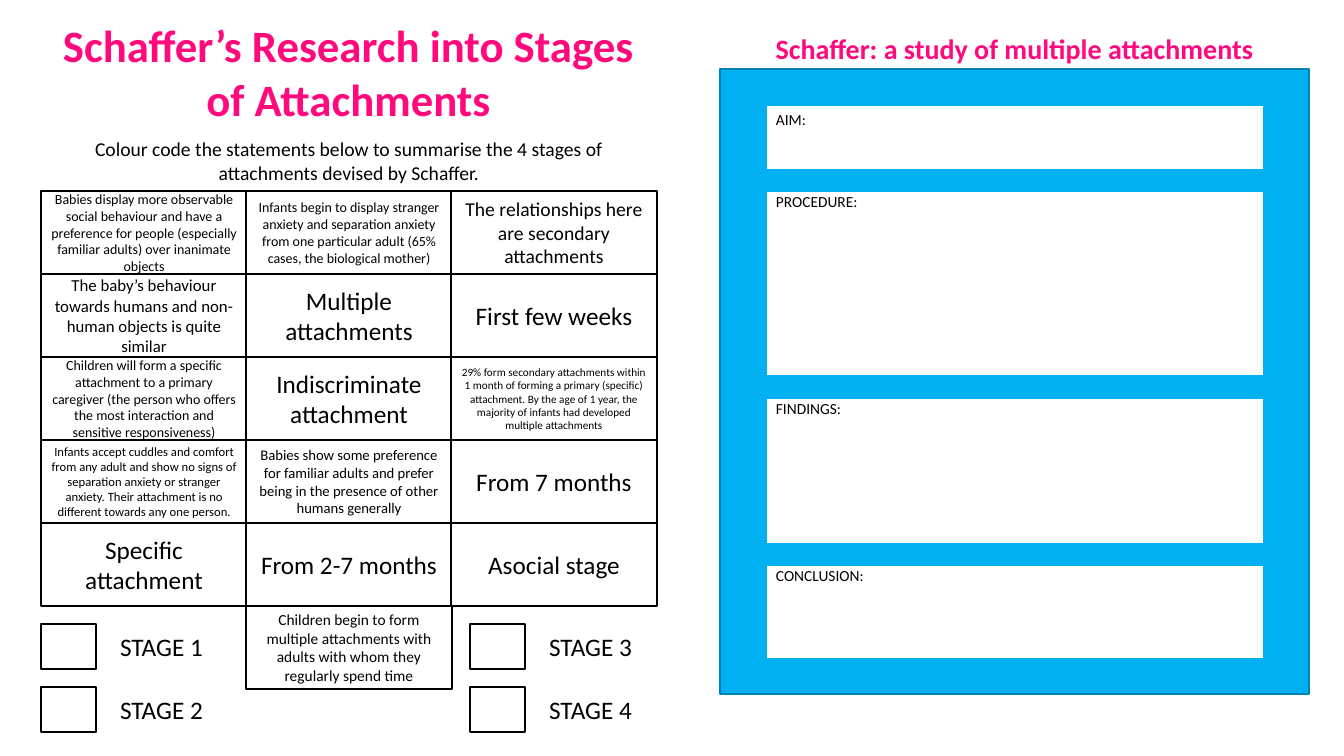
from pptx import Presentation
from pptx import util as u
from pptx.dml.color import RGBColor
from pptx.enum import shapes, text

PX = 914400 / 100.8
COLORS = {"pink": "FF097C", "blue": "00B0F0", "edge": "0082B2", "white": "FFFFFF", "black": "000000"}
STATEMENTS = [
    [("Babies display more observable social behaviour and have a preference for people (especially familiar adults) over inanimate objects", 10),
     ("Infants begin to display stranger anxiety and separation anxiety from one particular adult (65% cases, the biological mother)", 10),
     ("The relationships here are secondary attachments", 14)],
    [("The baby’s behaviour towards humans and non-human objects is quite similar", 12),
     ("Multiple attachments", 18),
     ("First few weeks", 18)],
    [("Children will form a specific attachment to a primary caregiver (the person who offers the most interaction and sensitive responsiveness)", 10),
     ("Indiscriminate attachment", 18),
     ("29% form secondary attachments within 1 month of forming a primary (specific) attachment. By the age of 1 year, the majority of infants had developed multiple attachments", 8)],
    [("Infants accept cuddles and comfort from any adult and show no signs of separation anxiety or stranger anxiety. Their attachment is no different towards any one person.", 9),
     ("Babies show some preference for familiar adults and prefer being in the presence of other humans generally", 10.5),
     ("From 7 months", 18)],
    [("Specific attachment", 18),
     ("From 2-7 months", 18),
     ("Asocial stage", 18)],
    [None,
     ("Children begin to form multiple attachments with adults with whom they regularly spend time", 11),
     None],
]
STUDY_PARTS = [("AIM:", 105, 65, 5), ("PROCEDURE:", 191, 185, 1),
               ("FINDINGS:", 398, 146, 1), ("CONCLUSION:", 565, 94, 1)]

prs = Presentation()
prs.slide_width, prs.slide_height = round(1344 * PX), round(756 * PX)
slide = prs.slides.add_slide(prs.slide_layouts[5])


def add_box(x, y, w, h, fill="white", line=None):
    sp = slide.shapes.add_shape(shapes.MSO_SHAPE.RECTANGLE, *(round(v * PX) for v in (x, y, w, h)))
    sp.shadow.inherit = False
    sp.fill.solid()
    sp.fill.fore_color.rgb = RGBColor.from_string(COLORS[fill])
    if line:
        sp.line.color.rgb = RGBColor.from_string(COLORS[line])
        sp.line.width = u.Pt(1)
    else:
        sp.line.fill.background()
    return sp


def write(sp, words, size, color="black", bold=False, align=text.PP_ALIGN.CENTER, anchor=text.MSO_ANCHOR.MIDDLE):
    tf = sp.text_frame
    tf.word_wrap = True
    tf.auto_size = text.MSO_AUTO_SIZE.NONE
    tf.vertical_anchor = anchor
    p = tf.paragraphs[0]
    p.text = words
    p.alignment = align
    p.font.name = "Calibri"
    p.font.size = u.Pt(size)
    p.font.bold = bold
    p.font.color.rgb = RGBColor.from_string(COLORS[color])


title = slide.shapes.title
title.left, title.top, title.width, title.height = (round(v * PX) for v in (52, 13, 593, 119))
write(title, "Schaffer’s Research into Stages of Attachments", 32, "pink", True, anchor=text.MSO_ANCHOR.TOP)

for words, size, color, bold, area in [
    ("Colour code the statements below to summarise the 4 stages of attachments devised by Schaffer.",
     14, "black", False, (41, 132, 616, 58)),
    ("Schaffer: a study of multiple attachments", 20, "pink", True, (720, 27, 589, 44)),
]:
    heading = slide.shapes.add_textbox(*(round(v * PX) for v in area))
    write(heading, words, size, color, bold, anchor=text.MSO_ANCHOR.TOP)

for row, statements in enumerate(STATEMENTS):
    for col, statement in enumerate(statements):
        if statement:
            write(add_box(41 + 205 * col, 191 + 83 * row, 206, 83, line="black"), *statement)

for i in range(4):
    x, y = (41, 470)[i // 2], 624 + 63 * (i % 2)
    add_box(x, y, 55, 45, line="black")
    write(add_box(x + 57, y, 127, 45), f"STAGE {i + 1}", 18)

add_box(720, 69, 589, 625, "blue", "edge")
for label, y, height, inset in STUDY_PARTS:
    part = add_box(766, y, 498, height, line="blue")
    write(part, label, 11, align=text.PP_ALIGN.LEFT, anchor=text.MSO_ANCHOR.TOP)
    part.text_frame.margin_top = round(inset * PX)

prs.save("out.pptx")
